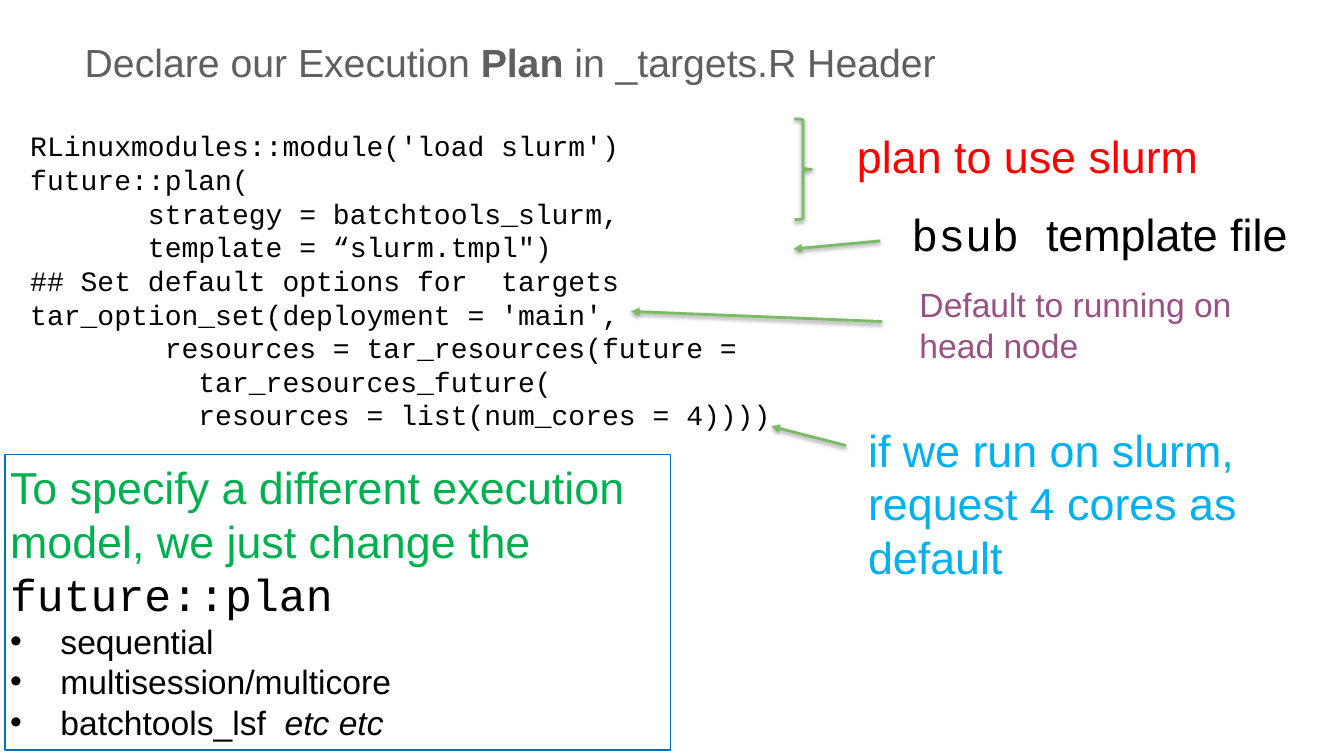
from dataclasses import dataclass

from lxml.etree import SubElement
from pptx import Presentation
from pptx.dml.color import RGBColor
from pptx.enum.shapes import MSO_CONNECTOR as Connector, MSO_SHAPE as Shape
from pptx.enum.text import MSO_ANCHOR as Anchor, PP_ALIGN as Align
from pptx.oxml.ns import qn
from pptx.util import Inches, Pt


@dataclass(frozen=True)
class Theme:
    sans: str = "Arial"
    mono: str = "Courier New"
    black: str = "000000"
    title: str = "5F5F5F"
    marker: str = "79BC64"
    plan: str = "FF0000"
    head_node: str = "985085"
    cores: str = "00B0F0"
    model: str = "00B050"
    frame: str = "0070C0"
    code_size: int = 20
    small_size: int = 24
    title_size: int = 28
    large_size: int = 32


class SlideBuilder:
    def __init__(self, slide, theme):
        self.shapes = slide.shapes
        self.theme = theme

    def style(self, font, size=None, color=None, face=None):
        if size:
            font.size = Pt(size)
        if color:
            font.color.rgb = RGBColor.from_string(color)
        if face:
            font.name = face

    def prepare(self, frame, anchor=Anchor.TOP):
        frame.word_wrap = True
        frame.vertical_anchor = anchor
        frame.margin_left = frame.margin_right = Inches(0.05)
        frame.margin_top = frame.margin_bottom = Inches(0.05)
        return frame

    def text(self, box, lines, size, color, face=None, anchor=Anchor.TOP):
        textbox = self.shapes.add_textbox(*map(Inches, box))
        frame = self.prepare(textbox.text_frame, anchor)
        frame.text = "\n".join(lines)
        for paragraph in frame.paragraphs:
            self.style(paragraph.font, size, color, face or self.theme.sans)
        return frame

    def panel(self, box):
        panel = self.shapes.add_shape(Shape.RECTANGLE, *map(Inches, box))
        panel.shadow.inherit = False
        panel.fill.background()
        panel.line.color.rgb = RGBColor.from_string(self.theme.frame)
        panel.line.width = Pt(1)
        return self.prepare(panel.text_frame)

    def bullet(self, frame, text):
        paragraph = frame.add_paragraph()
        paragraph.text = text
        paragraph.alignment = Align.LEFT
        properties = paragraph._p.get_or_add_pPr()
        properties.set("marL", str(Inches(0.5)))
        properties.set("indent", str(-Inches(0.5)))
        SubElement(properties, qn("a:buFont"), typeface=self.theme.sans)
        SubElement(properties, qn("a:buChar"), char="•")
        self.style(paragraph.font, self.theme.small_size, self.theme.black, self.theme.sans)
        return paragraph

    def mark(self, marker):
        """Give a brace or arrow its green line and soft shadow below."""
        marker.line.color.rgb = RGBColor.from_string(self.theme.marker)
        marker.line.width = Pt(2)
        effects = SubElement(marker.element.spPr, qn("a:effectLst"))
        shadow = SubElement(effects, qn("a:outerShdw"), blurRad=str(Pt(3)),
                            dist=str(Pt(1.6)), dir="5400000", rotWithShape="0")
        shade = SubElement(shadow, qn("a:srgbClr"), val=self.theme.black)
        SubElement(shade, qn("a:alpha"), val="38000")

    def brace(self, box):
        brace = self.shapes.add_shape(Shape.RIGHT_BRACE, *map(Inches, box))
        brace.fill.background()
        self.mark(brace)

    def arrow(self, start, end):
        arrow = self.shapes.add_connector(Connector.STRAIGHT, *map(Inches, start + end))
        self.mark(arrow)
        SubElement(arrow.line._get_or_add_ln(), qn("a:tailEnd"), type="triangle")


CODE = """\
RLinuxmodules::module('load slurm')
future::plan(
       strategy = batchtools_slurm,
       template = “slurm.tmpl")
## Set default options for  targets
tar_option_set(deployment = 'main',
        resources = tar_resources(future =
          tar_resources_future(
          resources = list(num_cores = 4))))"""


def main():
    presentation = Presentation()
    presentation.slide_width, presentation.slide_height = Inches(13.33), Inches(7.5)
    theme = Theme()
    builder = SlideBuilder(presentation.slides.add_slide(presentation.slide_layouts[6]), theme)

    title = builder.text((0.79, 0, 11.31, 1.23), ["Declare our Execution "],
                         theme.title_size, theme.title, anchor=Anchor.MIDDLE).paragraphs[0]
    for words, bold in (("Plan ", True), ("in _targets.R Header", False)):
        run = title.add_run()
        run.text, run.font.bold = words, bold

    builder.text((0.25, 1.23, 8.27, 4.48), CODE.splitlines(),
                 theme.code_size, theme.black, theme.mono)

    builder.brace((7.88, 1.18, 0.17, 1))
    notes = (
        (8.45, 1.23, 0.64, "plan to use slurm", theme.large_size, theme.plan),
        (8.99, 2, 0.64, "bsub ", theme.large_size, theme.black),
        (9.07, 2.77, 0.91, "Default to running on head node", theme.small_size, theme.head_node),
        (8.56, 4.14, 1.72, "if we run on slurm, request 4 cores as default",
         theme.large_size, theme.cores),
    )
    frames = [builder.text((left, top, 3.93, height), [words], size, color)
              for left, top, height, words, size, color in notes]
    template_note = frames[1].paragraphs[0]
    template_note.runs[0].font.name = theme.mono
    template_note.add_run().text = "template file"

    for start, end in (((8.73, 2.39), (7.87, 2.47)),
                       ((8.75, 3.19), (6.26, 3.09)),
                       ((8.39, 4.42), (7.65, 4.23))):
        builder.arrow(start, end)

    models = builder.panel((0.05, 4.51, 6.6, 2.93))
    lead = models.paragraphs[0]
    lead.alignment = Align.LEFT
    builder.style(lead.font, theme.large_size)
    for words, color, face in (
            ("To specify a different execution model, we just change the ", theme.model, theme.sans),
            ("future::plan", theme.black, theme.mono)):
        run = lead.add_run()
        run.text = words
        builder.style(run.font, color=color, face=face)
    for model in ("sequential", "multisession/multicore", "batchtools_lsf  "):
        last = builder.bullet(models, model)
    others = last.add_run()
    others.text, others.font.italic = "etc etc", True

    presentation.save("out.pptx")


if __name__ == "__main__":
    main()
